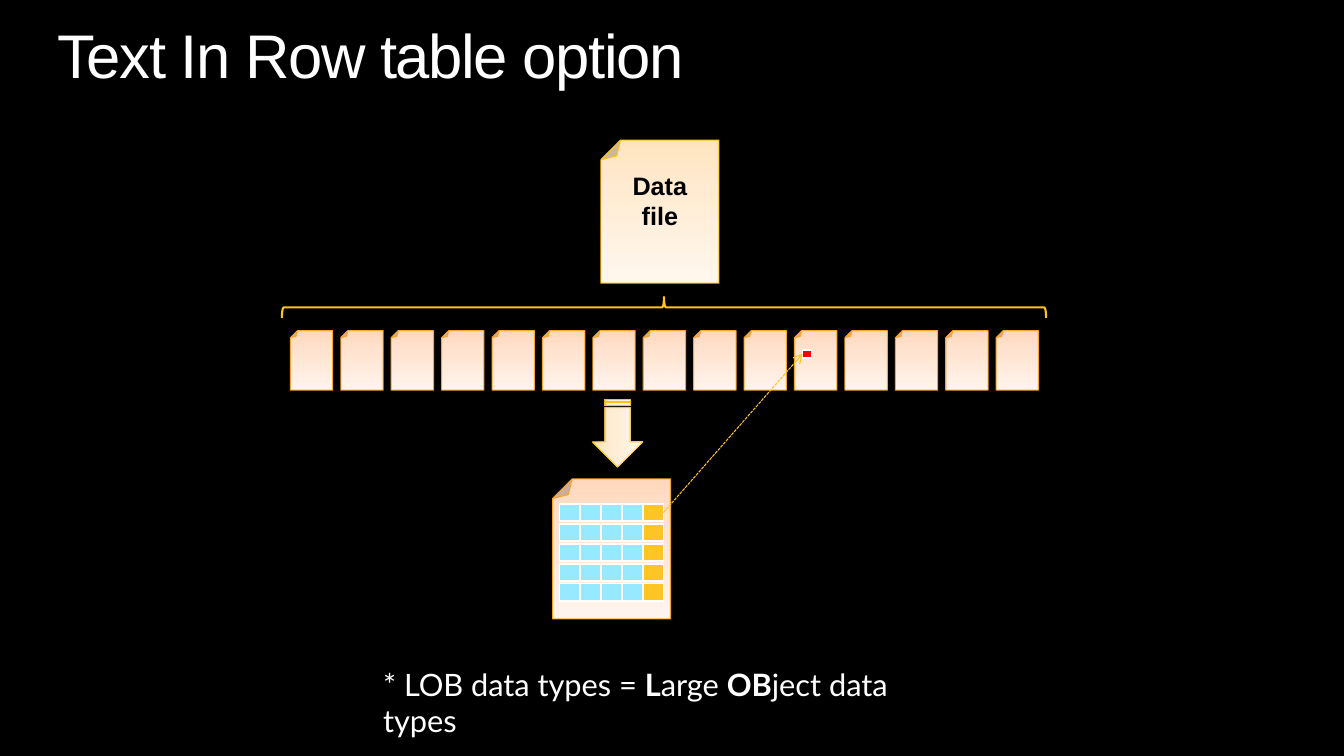
from lxml.etree import SubElement
from pptx import Presentation
from pptx.dml.color import RGBColor
from pptx.enum.dml import MSO_LINE
from pptx.enum.shapes import MSO_CONNECTOR, MSO_SHAPE
from pptx.enum.text import MSO_ANCHOR, PP_ALIGN
from pptx.oxml import parse_xml
from pptx.oxml.ns import nsdecls, qn
from pptx.util import Inches, Pt

TITLE = "Text In Row table option"
LABEL = ["Data", "file"]
NOTE = [("* LOB data types = ", False), ("L", True), ("arge ", False),
        ("OB", True), ("ject data types", False)]

BLACK = RGBColor(0x00, 0x00, 0x00)
WHITE = RGBColor(0xFF, 0xFF, 0xFF)
GOLD = RGBColor(0xFF, 0xC2, 0x1F)
ORANGE = RGBColor(0xF9, 0xA3, 0x2E)
AMBER = RGBColor(0xFF, 0xC4, 0x25)
CYAN = RGBColor(0x96, 0xE9, 0xFE)
RED = RGBColor(0xFF, 0x00, 0x00)
CREAM = [(0, "FFE4BE"), (35, "FFEBD1"), (100, "FFF7EE")]
PEACH = [(0, "FFD8BC"), (35, "FFE3D0"), (100, "FFF4ED")]

PAGES, PAGE_X, PAGE_STEP = 15, 2.88, 0.5
ROWS, COLS = 5, 5
GRID_X, GRID_Y, GRID_W, GRID_H = 5.55, 5, 1.03, 0.96
CELL_W, CELL_H = GRID_W / COLS, 0.17
ROW_STEP = (GRID_H - CELL_H) / (ROWS - 1)

deck = Presentation()
deck.slide_width, deck.slide_height = Inches(13.33), Inches(7.5)
slide = deck.slides.add_slide(deck.slide_layouts[5])
slide.background.fill.solid()
slide.background.fill.fore_color.rgb = BLACK
shapes = slide.shapes


def add(kind, box, line, width, turn=0):
    shape = shapes.add_shape(kind, *map(Inches, box))
    shape.shadow.inherit = False
    shape.rotation = turn
    shape.fill.background()
    shape.line.color.rgb = line
    shape.line.width = Pt(width)
    return shape


def shade(shape, stops):
    """Fill the shape with a three-stop gradient."""
    marks = "".join(f'<a:gs pos="{pos * 1000}"><a:srgbClr val="{tint}"/></a:gs>'
                    for pos, tint in stops)
    grad = parse_xml(f'<a:gradFill {nsdecls("a")} rotWithShape="1"><a:gsLst>{marks}'
                     '</a:gsLst><a:lin ang="16200000" scaled="0"/></a:gradFill>')
    props = shape.element.spPr
    props.replace(props.find(qn("a:noFill")), grad)


def add_page(box, line, stops):
    shade(add(MSO_SHAPE.FOLDED_CORNER, box, line, 0.75, 180), stops)


def add_cell(box, color):
    cell = add(MSO_SHAPE.RECTANGLE, box, WHITE, 1.25)
    cell.fill.solid()
    cell.fill.fore_color.rgb = color
    return cell


def style(font, face, size, color, bold=False):
    font.name, font.size, font.bold = face, Pt(size), bold
    font.color.rgb = color


def pad(frame):
    frame.margin_left = frame.margin_right = 0
    frame.margin_top = frame.margin_bottom = 0


title = shapes.title
title.left, title.top, title.width, title.height = map(Inches, (0.57, 0.25, 12.19, 0.67))
title.text_frame.text = TITLE
pad(title.text_frame)
title.text_frame.vertical_anchor = MSO_ANCHOR.TOP
head = title.text_frame.paragraphs[0]
head.alignment, head.line_spacing = PP_ALIGN.LEFT, 0.9
style(head.runs[0].font, "Arial", 44, WHITE)
head.runs[0].font._element.set("spc", "-100")

add_page((5.96, 1.39, 1.17, 1.42), GOLD, CREAM)
label = shapes.add_textbox(*map(Inches, (5.96, 1.64, 1.17, 0.71))).text_frame
label.word_wrap = True
label.text = "\n".join(LABEL)
for para in label.paragraphs:
    para.alignment = PP_ALIGN.CENTER
    style(para.runs[0].font, "Arial", 18, BLACK, True)

for i in range(PAGES):
    add_page((PAGE_X + i * PAGE_STEP, 3.28, 0.42, 0.59), ORANGE, PEACH)
add(MSO_SHAPE.LEFT_BRACE, (6.48, -0.74, 0.21, 7.58), GOLD, 1.5, 90)

add_page((5.48, 4.75, 1.17, 1.39), ORANGE, PEACH)
cells = [add_cell((GRID_X + col * CELL_W, GRID_Y + row * ROW_STEP, CELL_W, CELL_H),
                  AMBER if col == COLS - 1 else CYAN)
         for row in range(ROWS) for col in range(COLS)]

target = add_cell((7.96, 3.47, 0.09, 0.08), RED)
link = shapes.add_connector(MSO_CONNECTOR.STRAIGHT, 0, 0, 0, 0)
link.begin_connect(cells[COLS - 1], 3)
link.end_connect(target, 1)
link.line.color.rgb = GOLD
link.line.width = Pt(0.75)
link.line.dash_style = MSO_LINE.SQUARE_DOT
SubElement(link.line._get_or_add_ln(), qn("a:tailEnd"), type="arrow")
SubElement(link.element.spPr, qn("a:effectLst"))

shade(add(MSO_SHAPE.STRIPED_RIGHT_ARROW, (5.79, 4.05, 0.67, 0.5), GOLD, 0.75, 90), CREAM)

note = shapes.add_textbox(*map(Inches, (3.8, 6.6, 5.6, 0.37))).text_frame
note.word_wrap = True
pad(note)
for text, bold in NOTE:
    run = note.paragraphs[0].add_run()
    run.text = text
    style(run.font, "Lato", 22, WHITE, bold)

deck.save("out.pptx")
